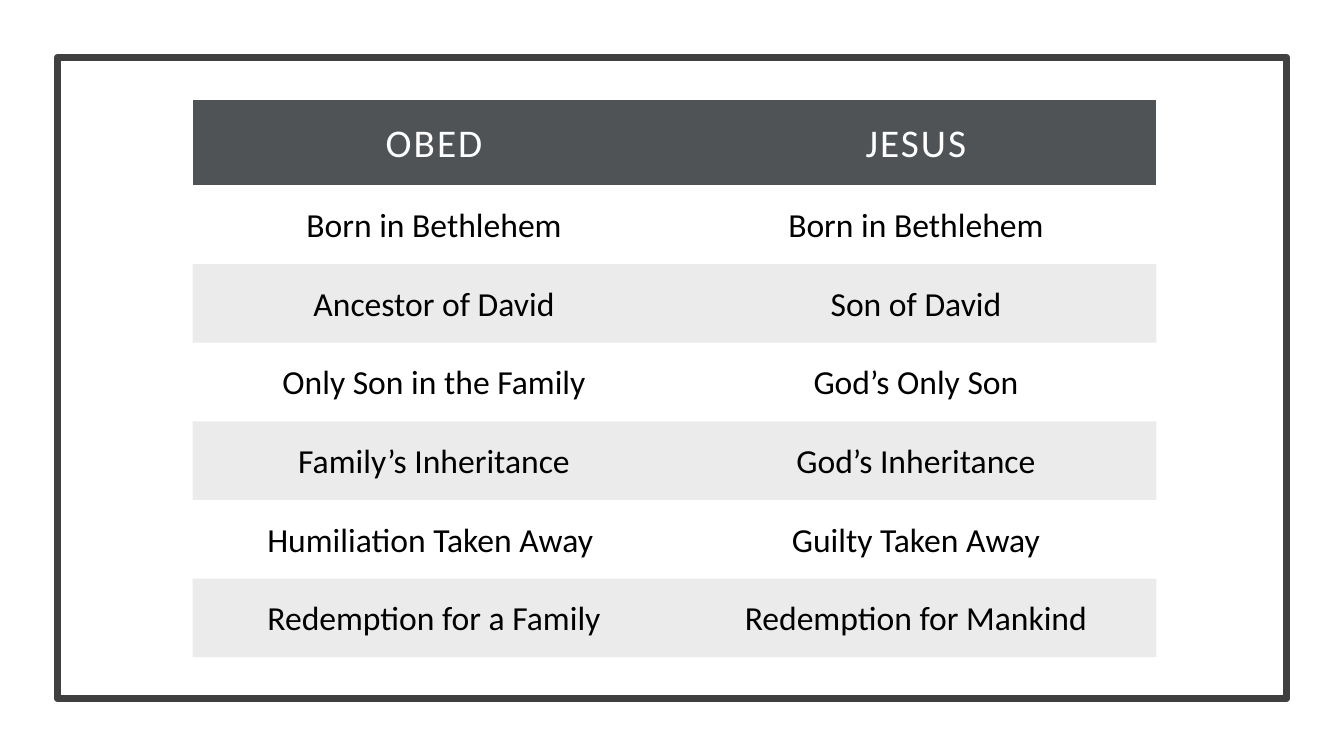
from pptx import Presentation
from pptx.dml.color import RGBColor
from pptx.enum.shapes import MSO_SHAPE
from pptx.enum.text import MSO_ANCHOR, PP_ALIGN
from pptx.oxml.ns import qn
from pptx.util import Inches, Pt
from lxml import etree

RECT = MSO_SHAPE.RECTANGLE
CENTER = PP_ALIGN.CENTER
MIDDLE = MSO_ANCHOR.MIDDLE
NO_GRID_STYLE = "{2D5ABB26-0587-4C30-8999-92F81FD0307C}"

COLORS = {
    "white": "FFFFFF",
    "black": "000000",
    "frame": "404040",
    "header": "505356",
}
FONT = "Calibri"
BAND_OPACITY = 8  # percent

COLUMN_WIDTHS = [4.79, 4.77]
HEADER_HEIGHT, ROW_HEIGHT = 0.85, 0.78
ROWS = [
    ("OBED", "JESUS"),
    ("Born in Bethlehem", "Born in Bethlehem"),
    ("Ancestor of David", "Son of David"),
    ("Only Son in the Family", "God’s Only Son"),
    ("Family’s Inheritance", "God’s Inheritance"),
    ("Humiliation Taken Away ", "Guilty Taken Away"),
    ("Redemption for a Family", "Redemption for Mankind"),
]


def rgb(name):
    return RGBColor.from_string(COLORS[name])


def add_frame(s, left, top, width, height):
    sp = s.shapes.add_shape(RECT, Inches(left), Inches(top), Inches(width), Inches(height))
    sp.shadow.inherit = False
    sp.fill.solid()
    sp.fill.fore_color.rgb = rgb("white")
    sp.line.color.rgb = rgb("frame")
    sp.line.width = Pt(5.5)


def fill_cell(cell, color, opacity=100):
    cell.fill.solid()
    cell.fill.fore_color.rgb = rgb(color)
    if opacity < 100:
        clr = cell._tc.tcPr.find(qn("a:solidFill"))[0]
        etree.SubElement(clr, qn("a:alpha")).set("val", str(opacity * 1000))


def write_cell(cell, text, size, color, spacing=0):
    cell.vertical_anchor = MIDDLE
    cell.margin_left = cell.margin_right = Inches(0.16)
    cell.margin_top = cell.margin_bottom = Inches(0.16)
    p = cell.text_frame.paragraphs[0]
    p.alignment = CENTER
    p.line_spacing = 1.07
    r = p.add_run()
    r.text = text
    p.font.name = FONT
    p.font.size = Pt(size)
    p.font.color.rgb = rgb(color)
    if spacing:  # letter spacing in hundredths of a point
        r.font._element.set("spc", str(int(spacing * 100)))


def add_comparison_table(s, left, top):
    heights = [HEADER_HEIGHT] + [ROW_HEIGHT] * (len(ROWS) - 1)
    table = s.shapes.add_table(
        len(ROWS), len(COLUMN_WIDTHS), Inches(left), Inches(top),
        Inches(sum(COLUMN_WIDTHS)), Inches(sum(heights))).table
    table.horz_banding = False
    table._tbl.tblPr.find(qn("a:tableStyleId")).text = NO_GRID_STYLE
    for column, width in zip(table.columns, COLUMN_WIDTHS):
        column.width = Inches(width)
    for i, (texts, height) in enumerate(zip(ROWS, heights)):
        table.rows[i].height = Inches(height)
        for cell, text in zip(table.rows[i].cells, texts):
            if i == 0:
                fill_cell(cell, "header")
                write_cell(cell, text, 28, "white", spacing=1.5)
                continue
            if i % 2 == 0:
                fill_cell(cell, "black", BAND_OPACITY)
            else:
                cell.fill.background()
            write_cell(cell, text, 24, "black")


def main():
    prs = Presentation()
    prs.slide_width, prs.slide_height = Inches(13.33), Inches(7.5)
    s = prs.slides.add_slide(prs.slide_layouts[6])

    # Border around the slide
    add_frame(s, 0.57, 0.57, 12.19, 6.36)

    # Obed and Jesus side by side
    add_comparison_table(s, 1.91, 0.99)

    prs.save("out.pptx")


if __name__ == "__main__":
    main()
